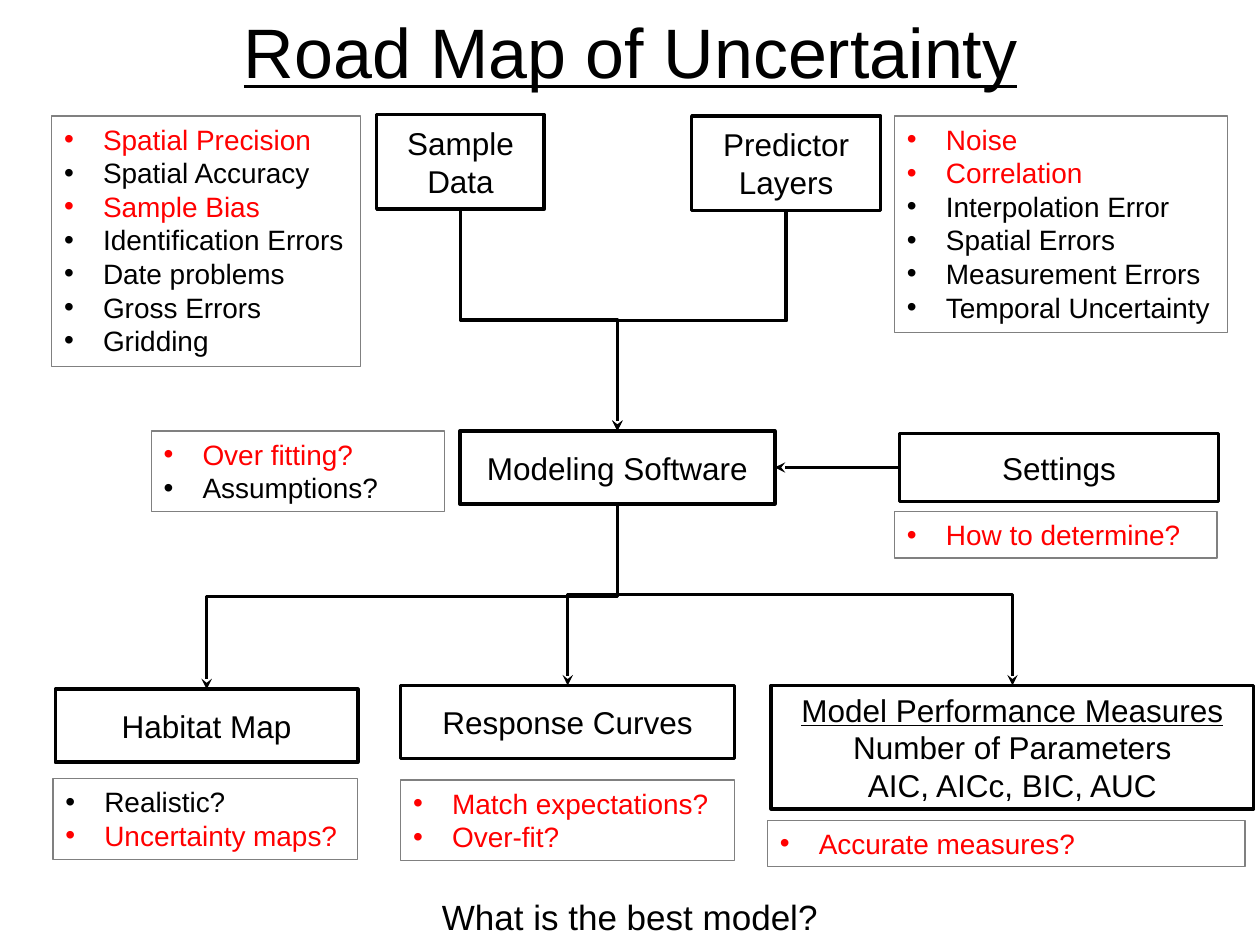
"""Build the 'Road Map of Uncertainty' slide: a modelling flow chart with boxed notes."""
import lxml.etree
import pptx
import pptx.dml.color
import pptx.enum.shapes
import pptx.enum.text
import pptx.oxml.ns
import pptx.util

RGB = pptx.dml.color.RGBColor
ANCHOR = pptx.enum.text.MSO_ANCHOR
ALIGN = pptx.enum.text.PP_ALIGN
FIT = pptx.enum.text.MSO_AUTO_SIZE
KINDS = pptx.enum.shapes
Pt = pptx.util.Pt
qn = pptx.oxml.ns.qn

INK, ALERT, FRAME = RGB(0, 0, 0), RGB(255, 0, 0), RGB(128, 128, 128)
THEME = {
    "title": {
        "frame": {"word_wrap": False, "vertical_anchor": ANCHOR.TOP, "auto_size": FIT.NONE},
        "font": {"name": "Arial", "size": Pt(40), "underline": True},
        "align": ALIGN.CENTER,
    },
    "question": {
        "frame": {"word_wrap": True, "auto_size": FIT.SHAPE_TO_FIT_TEXT},
        "font": {"name": "Arial", "size": Pt(20)},
        "align": ALIGN.CENTER,
    },
    "step": {
        "frame": {"word_wrap": True, "vertical_anchor": ANCHOR.MIDDLE},
        "font": {"name": "Arial", "size": Pt(18)},
        "align": ALIGN.CENTER,
        "line": (INK, Pt(2)),
    },
    "note": {
        "frame": {"word_wrap": True, "vertical_anchor": ANCHOR.TOP, "auto_size": FIT.SHAPE_TO_FIT_TEXT},
        "font": {"name": "Arial", "size": Pt(16)},
        "align": ALIGN.LEFT,
        "line": (FRAME, Pt(0.75)),
        "indent": pptx.util.Inches(0.31),
    },
}

deck = pptx.Presentation()
deck.slide_width, deck.slide_height = pptx.util.Inches(10), pptx.util.Inches(7.5)
column, row = deck.slide_width / 100, deck.slide_height / 75
slide = deck.slides.add_slide(deck.slide_layouts.get_by_name("Title Only"))


def place(area):
    """Turn left, top, width and height in columns and rows into lengths."""
    return [round(share * unit) for share, unit in zip(area, (column, row, column, row))]


def write(holder, lines, style, alerts=()):
    """Fill a shape with one styled paragraph per line."""
    frame = holder.text_frame
    frame.text = "\n".join(lines)
    for name, value in style["frame"].items():
        setattr(frame, name, value)
    for paragraph in frame.paragraphs:
        paragraph.alignment = style["align"]
        if "indent" in style:
            properties = paragraph._p.get_or_add_pPr()
            properties.set("marL", str(style["indent"]))
            properties.set("indent", str(-style["indent"]))
            lxml.etree.SubElement(properties, qn("a:buFont"), typeface="Arial")
            lxml.etree.SubElement(properties, qn("a:buChar"), char="•")
        for run in paragraph.runs:
            for name, value in style["font"].items():
                setattr(run.font, name, value)
            run.font.color.rgb = ALERT if run.text in alerts else INK
    if "line" in style:
        holder.shadow.inherit = False
        holder.fill.background()
        holder.line.color.rgb, holder.line.width = style["line"]


title = slide.shapes.title
title.left, title.top, title.width, title.height = place((18, 0.2, 64.1, 7.7))
write(title, ["Road Map of Uncertainty"], THEME["title"])

step_areas = {
    "Sample Data": (29.9, 9.1, 13.3, 7.5),
    "Predictor Layers": (54.9, 9.2, 15, 7.5),
    "Modeling Software": (36.5, 34.2, 25, 5.8),
    "Settings": (71.4, 34.4, 25.3, 5.4),
    "Habitat Map": (4.4, 54.7, 24, 5.8),
    "Response Curves": (31.8, 54.4, 26.5, 5.8),
    "Model Performance Measures\nNumber of Parameters\nAIC, AICc, BIC, AUC": (61.2, 54.4, 38.3, 9.8),
}
steps = []
for wording, area in step_areas.items():
    step = slide.shapes.add_shape(KINDS.MSO_SHAPE.RECTANGLE, *place(area))
    write(step, wording.split("\n"), THEME["step"])
    steps.append(step)
sample, predictors, software, settings, habitat, curves, measures = steps
measures.text_frame.paragraphs[0].runs[0].font.underline = True

notes = [
    ((4.1, 9.2, 24.5, 19.9), False,
     ["Spatial Precision", "Spatial Accuracy", "Sample Bias", "Identification Errors",
      "Date problems", "Gross Errors", "Gridding"],
     ["Spatial Precision", "Sample Bias"]),
    ((71, 9.2, 26.4, 17.2), False,
     ["Noise", "Correlation", "Interpolation Error", "Spatial Errors",
      "Measurement Errors", "Temporal Uncertainty"],
     ["Noise", "Correlation"]),
    ((12, 34.2, 23.3, 6.4), True, ["Over fitting?", "Assumptions?"], ["Over fitting?"]),
    ((71, 40.6, 25.6, 3.7), True, ["How to determine?"], ["How to determine?"]),
    ((4.2, 61.8, 24.2, 6.4), True, ["Realistic?", "Uncertainty maps?"], ["Uncertainty maps?"]),
    ((31.8, 61.9, 26.5, 6.4), True, ["Match expectations?", "Over-fit?"],
     ["Match expectations?", "Over-fit?"]),
    ((60.9, 65.1, 37.9, 3.7), True, ["Accurate measures?"], ["Accurate measures?"]),
]
for area, wraps, concerns, alerts in notes:
    note = slide.shapes.add_shape(KINDS.MSO_SHAPE.RECTANGLE, *place(area))
    write(note, concerns, THEME["note"], alerts)
    note.text_frame.word_wrap = wraps

TOP, LEFT, BOTTOM, RIGHT = range(4)
flows = [
    (sample, BOTTOM, software, TOP),
    (predictors, BOTTOM, software, TOP),
    (settings, LEFT, software, RIGHT),
    (software, BOTTOM, habitat, TOP),
    (software, BOTTOM, curves, TOP),
    (software, BOTTOM, measures, TOP),
]
for source, exit_side, target, entry_side in flows:
    flow = slide.shapes.add_connector(KINDS.MSO_CONNECTOR.ELBOW, 0, 0, 0, 0)
    flow.begin_connect(source, exit_side)
    flow.end_connect(target, entry_side)
    if exit_side == BOTTOM:
        across, down = flow.end_x - flow.begin_x, flow.end_y - flow.begin_y
        middle_x, middle_y = (flow.begin_x + flow.end_x) // 2, (flow.begin_y + flow.end_y) // 2
        flow.left, flow.top = middle_x - down // 2, middle_y - abs(across) // 2
        flow.width, flow.height = down, abs(across)
        turn = {"rot": 270 if across > 0 else 90, "flipH": int(across > 0), "flipV": 0}
        turn["rot"] *= 60000
        for name, value in turn.items():
            flow._element.spPr.find(qn("a:xfrm")).set(name, str(value))
    flow.line.color.rgb, flow.line.width = THEME["step"]["line"]
    lxml.etree.SubElement(flow.line._get_or_add_ln(), qn("a:tailEnd"), type="stealth")
    lxml.etree.SubElement(flow._element.spPr, qn("a:effectLst"))

question = slide.shapes.add_textbox(*place((0, 70.6, 100, 4.4)))
write(question, ["What is the best model?"], THEME["question"])

deck.save("out.pptx")
